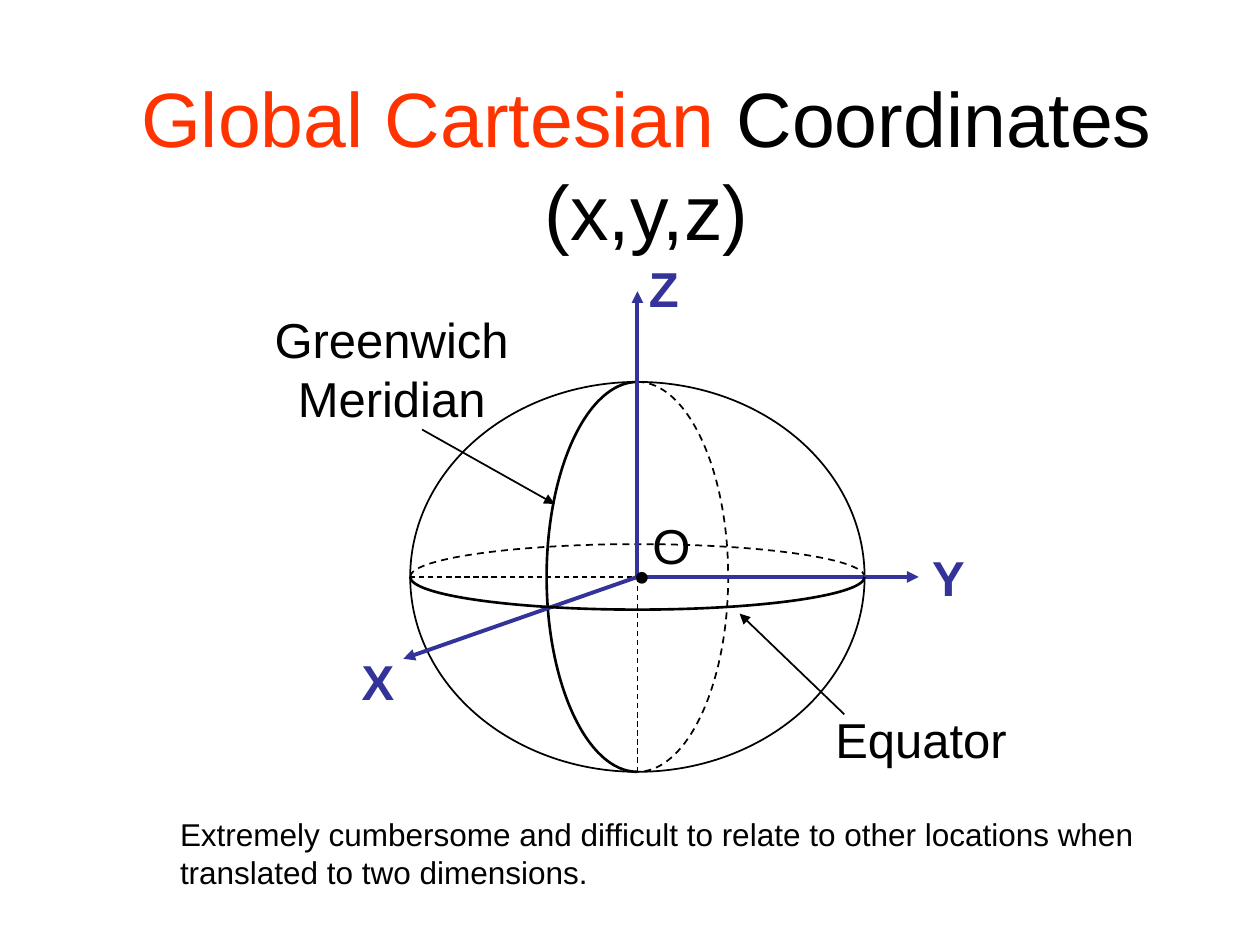
"""Build the Global Cartesian Coordinates slide."""
from math import cos, radians, sin

from lxml import etree
from pptx import Presentation
from pptx.dml.color import RGBColor
from pptx.enum.dml import MSO_LINE
from pptx.enum.shapes import MSO_CONNECTOR, MSO_SHAPE
from pptx.enum.text import MSO_ANCHOR, MSO_AUTO_SIZE, PP_ALIGN
from pptx.oxml.ns import qn
from pptx.util import Cm, Pt

STRAIGHT = MSO_CONNECTOR.STRAIGHT
OVAL = MSO_SHAPE.OVAL
DASH = MSO_LINE.DASH
LEFT, CENTER = PP_ALIGN.LEFT, PP_ALIGN.CENTER
MIDDLE = MSO_ANCHOR.MIDDLE
NO_FIT, GROW = MSO_AUTO_SIZE.NONE, MSO_AUTO_SIZE.SHAPE_TO_FIT_TEXT

BLACK, RED, BLUE = "000000", "FF3300", "333399"
CX, CY = 12.85, 11.63
RX, RY = 4.58, 3.93
MERIDIAN_RX, EQUATOR_RY = 1.83, 0.66
KAPPA = 0.55


def rgb(value):
    return RGBColor.from_string(value)


class Deck:
    def __init__(self, font="Arial", size=28):
        self.font, self.size = font, size
        self.prs = Presentation()
        self.prs.slide_width, self.prs.slide_height = Cm(25.4), Cm(19.05)
        self.s = self.prs.slides.add_slide(self.prs.slide_layouts[5])
        self.shapes = self.s.shapes

    def start_group(self):
        self.shapes = self.s.shapes.add_group_shape().shapes

    def end_group(self):
        self.shapes = self.s.shapes

    def title(self, x, y, w, h, runs, size):
        sp = self.s.shapes.title
        sp.left, sp.top, sp.width, sp.height = Cm(x), Cm(y), Cm(w), Cm(h)
        tf = sp.text_frame
        tf.auto_size, tf.vertical_anchor = NO_FIT, MIDDLE
        p = tf.paragraphs[0]
        p.alignment = CENTER
        p.font.name, p.font.size = self.font, Pt(size)
        for text, color in runs:
            r = p.add_run()
            r.text = text
            r.font.color.rgb = rgb(color)

    def text(self, x, y, w, h, lines, color=BLACK, bold=False,
             size=None, font=None, align=LEFT):
        tf = self.shapes.add_textbox(Cm(x), Cm(y), Cm(w), Cm(h)).text_frame
        tf.word_wrap, tf.auto_size = False, GROW
        tf.text = "\n".join(lines)
        for p in tf.paragraphs:
            p.alignment = align
            p.font.name, p.font.size = font or self.font, Pt(size or self.size)
            p.font.bold, p.font.color.rgb = bold, rgb(color)

    def stroke(self, sp, color, width, dash=None):
        sp.line.color.rgb, sp.line.width = rgb(color), Pt(width)
        if dash:
            sp.line.dash_style = dash

    def outline(self, sp, width, dash=None):
        sp.shadow.inherit = False
        sp.fill.background()
        self.stroke(sp, BLACK, width, dash)

    def ellipse(self, cx, cy, rx, ry, width=1):
        sp = self.shapes.add_shape(
            OVAL, Cm(cx - rx), Cm(cy - ry), Cm(2 * rx), Cm(2 * ry))
        self.outline(sp, width)

    def half_ellipse(self, cx, cy, rx, ry, start, width, dash=None):
        ux, uy = cos(radians(start)), sin(radians(start))
        weights = ((1, 0), (1, KAPPA), (KAPPA, 1), (0, 1),
                   (-KAPPA, 1), (-1, KAPPA), (-1, 0))
        points = [(Cm(cx + rx * (a * ux - b * uy)), Cm(cy + ry * (a * uy + b * ux)))
                  for a, b in weights]
        builder = self.shapes.build_freeform(*points[0])
        builder.add_line_segments(points[1:], close=False)
        sp = builder.convert_to_shape()
        segments = list(sp._element.iter(qn("a:lnTo")))
        for i in range(0, len(segments), 3):
            curve = etree.SubElement(segments[i].getparent(), qn("a:cubicBezTo"))
            for segment in segments[i:i + 3]:
                curve.append(segment[0])
                segment.getparent().remove(segment)
        self.outline(sp, width, dash)

    def line(self, x1, y1, x2, y2, color=BLACK, width=1, dash=None, arrow=True):
        sp = self.shapes.add_connector(STRAIGHT, Cm(x1), Cm(y1), Cm(x2), Cm(y2))
        self.stroke(sp, color, width, dash)
        spPr = sp._element.spPr
        if arrow:
            etree.SubElement(spPr.find(qn("a:ln")), qn("a:tailEnd"), type="triangle")
        etree.SubElement(spPr, qn("a:effectLst"))

    def axis_label(self, x, y, name):
        self.text(x, y, 1.17, 1.45, [name], BLUE, bold=True)

    def axis(self, x, y):
        self.line(CX, CY, x, y, BLUE, 2.25)


def main():
    d = Deck()
    d.title(1.07, 1.7, 23.93, 3.18,
            [("Global Cartesian", RED), (" Coordinates (x,y,z)", BLACK)], 44)

    d.start_group()
    d.half_ellipse(CX, CY, MERIDIAN_RX, RY, 90, 1.5)
    d.ellipse(CX, CY, RX, RY)
    d.line(CX - RX, CY, CX, CY, width=0.75, dash=DASH, arrow=False)
    d.text(12.9, 10.26, 1.27, 1.45, ["O"])
    d.axis_label(7.04, 13, "X")
    d.axis_label(12.83, 5.08, "Z")
    d.axis_label(18.54, 10.92, "Y")
    d.axis(8.13, 13.28)
    d.half_ellipse(CX, CY, RX, EQUATOR_RY, 180, 1, DASH)
    d.half_ellipse(CX, CY, MERIDIAN_RX, RY, -90, 1, DASH)
    d.axis(18.52, CY)
    d.line(CX, CY, CX, CY + RY, width=0.75, dash=DASH, arrow=False)
    d.text(5.28, 6.12, 5.23, 2.62, ["Greenwich", "Meridian"], align=CENTER)
    d.line(8.51, 8.66, 11.18, 10.16)
    d.text(16.59, 14.17, 3.99, 1.45, ["Equator"])
    d.line(17.02, 14.4, 14.91, 12.37)
    d.axis(CX, 5.87)
    d.text(12.52, 10.87, 0.86, 1.45, ["•"], font="Times New Roman")
    d.half_ellipse(CX, CY, RX, EQUATOR_RY, 0, 1.5)
    d.end_group()

    d.text(3.38, 16.31, 19.74, 1.78,
           ["Extremely cumbersome and difficult to relate to other locations when",
            "translated to two dimensions."], size=18)
    d.prs.save("out.pptx")


if __name__ == "__main__":
    main()
